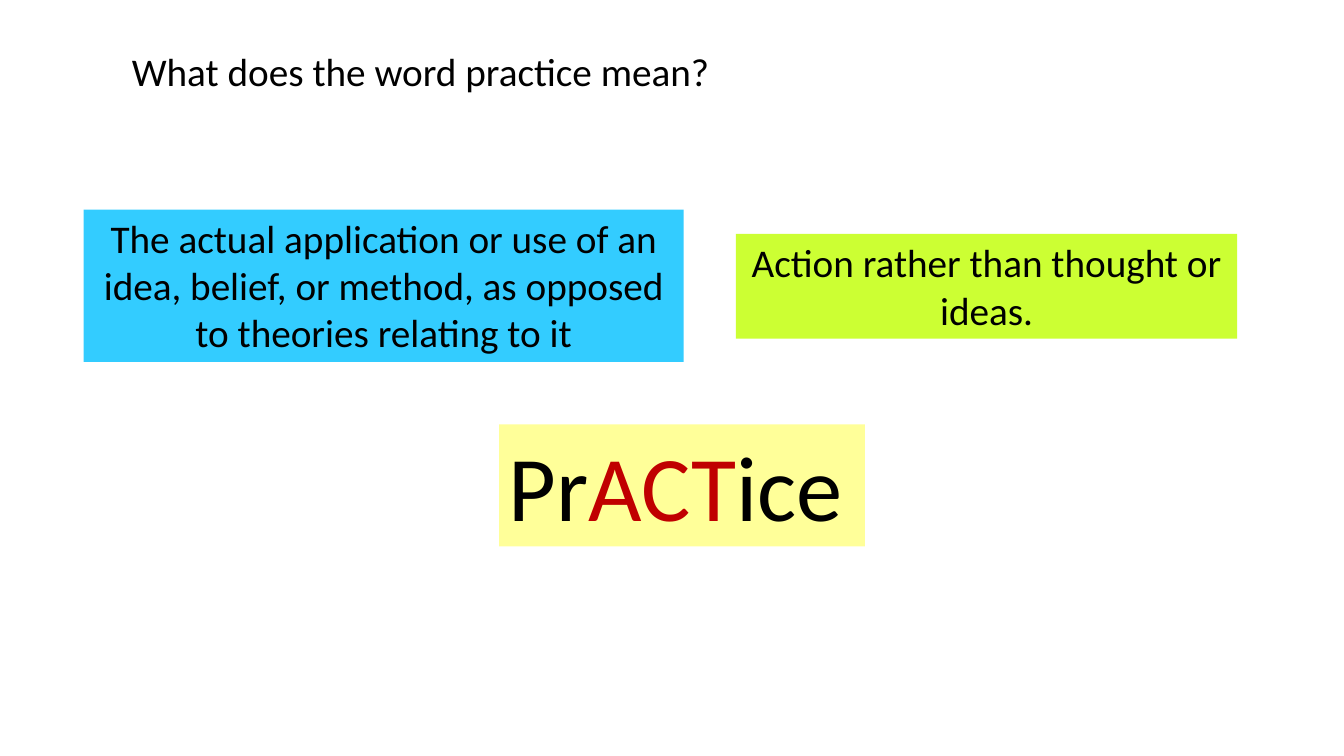
from pptx import Presentation
from pptx import util as u
from pptx.dml.color import RGBColor
from pptx.enum import text

PX = 9144  # EMU per px, 100 px to the inch
FONT = "Calibri"
BLACK = RGBColor(0x00, 0x00, 0x00)
RED = RGBColor(0xC0, 0x00, 0x00)
BLUE = RGBColor(0x33, 0xCC, 0xFF)
LIME = RGBColor(0xCC, 0xFF, 0x33)
YELLOW = RGBColor(0xFF, 0xFF, 0x99)


def add_text(slide, box, pieces, size=28, fill=None, align=text.PP_ALIGN.LEFT):
    """Place one paragraph of (wording, colour) pieces in a box of px."""
    shape = slide.shapes.add_textbox(*(u.Emu(length * PX) for length in box))
    if fill is not None:
        shape.fill.solid()
        shape.fill.fore_color.rgb = fill
    frame = shape.text_frame
    frame.word_wrap = True
    paragraph = frame.paragraphs[0]
    paragraph.alignment = align
    for wording, colour in pieces:
        run = paragraph.add_run()
        run.text = wording
        run.font.name = FONT
        run.font.size = u.Pt(size)
        run.font.color.rgb = colour


def add_question(slide, box):
    add_text(slide, box, [("What does the word practice mean?", BLACK)])


def add_definition(slide, box, wording, fill):
    add_text(slide, box, [(wording, BLACK)], fill=fill,
             align=text.PP_ALIGN.CENTER)


def add_highlighted_word(slide, box):
    pieces = [("Pr", BLACK), ("ACT", RED), ("ice", BLACK)]
    add_text(slide, box, pieces, size=66, fill=YELLOW)


def main():
    presentation = Presentation()
    presentation.slide_width = u.Emu(1333 * PX)
    presentation.slide_height = u.Emu(750 * PX)
    slide = presentation.slides.add_slide(presentation.slide_layouts[6])
    add_definition(slide, (83, 208, 595, 151),
                   "The actual application or use of an idea, belief, or "
                   "method, as opposed to theories relating to it", BLUE)
    add_definition(slide, (730, 232, 497, 104),
                   "Action rather than thought or ideas.", LIME)
    add_question(slide, (121, 42, 684, 57))
    add_highlighted_word(slide, (495, 421, 363, 121))
    presentation.save("out.pptx")


if __name__ == "__main__":
    main()
